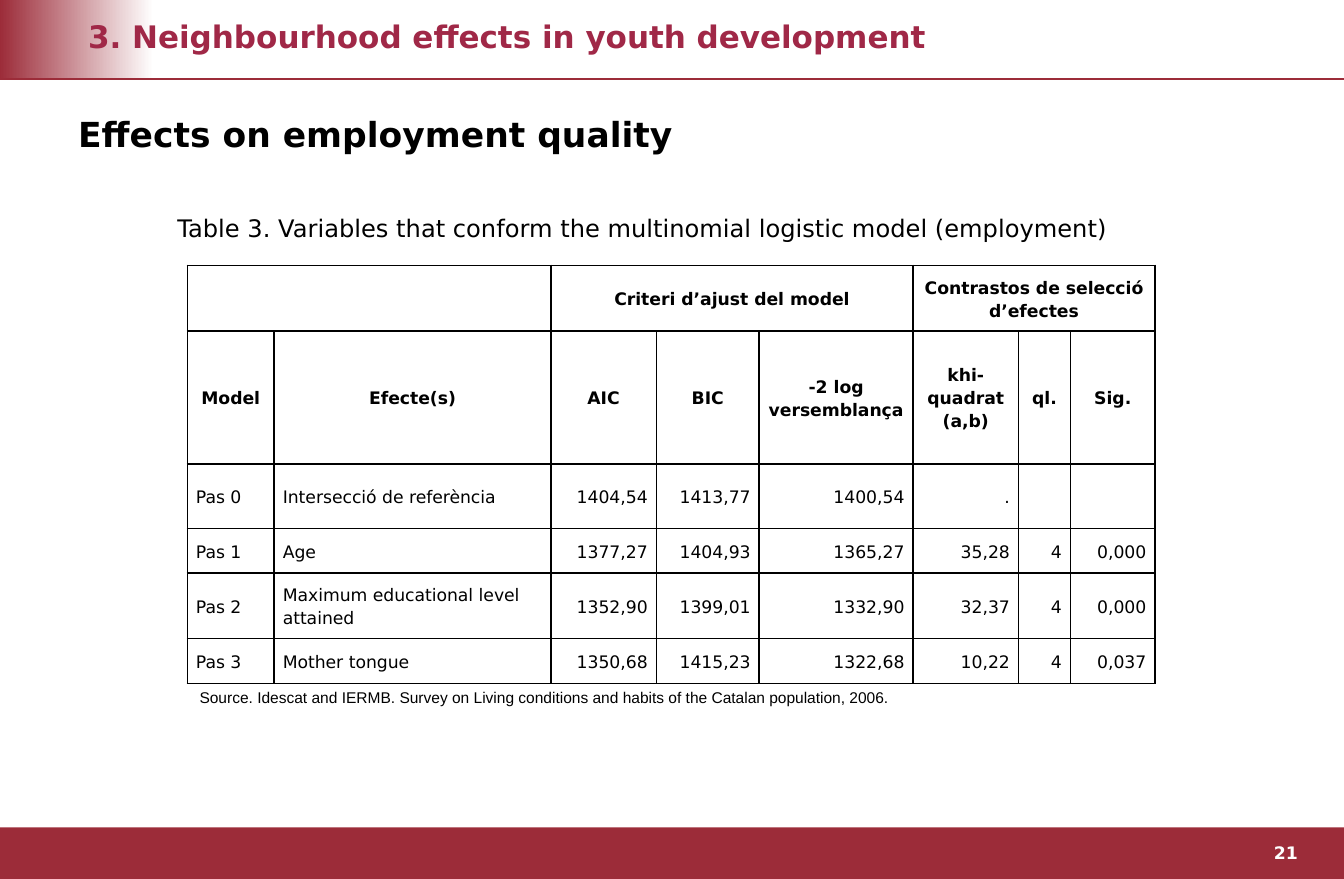
from lxml.etree import SubElement
from pptx import Presentation
from pptx.dml.color import RGBColor
from pptx.enum.shapes import MSO_CONNECTOR as Connector, MSO_SHAPE as Shape
from pptx.enum.text import MSO_ANCHOR as Anchor, MSO_AUTO_SIZE as AutoSize, PP_ALIGN as Align
from pptx.oxml.ns import qn
from pptx.util import Inches, Pt

SLIDE_WIDTH, SLIDE_HEIGHT = Pt(780), Pt(510.25)
MAROON, BLACK, WHITE = "9C2C39", "000000", "FFFFFF"
SANS = "DejaVu Sans"

TITLE = "3. Neighbourhood effects in youth development"
SUBTITLE = "Effects on employment quality"
CAPTION = "Table 3. Variables that conform the multinomial logistic model (employment)"
SOURCE = "Source. Idescat and IERMB. Survey on Living conditions and habits of the Catalan population, 2006."
PAGE_NUMBER = "21"

GROUPS = [(0, 1, ""), (2, 4, "Criteri d’ajust del model"), (5, 7, "Contrastos de selecció d’efectes")]
HEADINGS = ["Model", "Efecte(s)", "AIC", "BIC", "-2 log versemblança", "khi-quadrat (a,b)", "ql.", "Sig."]
STEPS = [
    ["Pas 0", "Intersecció de referència", "1404,54", "1413,77", "1400,54", ".", "", ""],
    ["Pas 1", "Age", "1377,27", "1404,93", "1365,27", "35,28", "4", "0,000"],
    ["Pas 2", "Maximum educational level attained", "1352,90", "1399,01", "1332,90", "32,37", "4", "0,000"],
    ["Pas 3", "Mother tongue", "1350,68", "1415,23", "1322,68", "10,22", "4", "0,037"],
]
COLUMN_WIDTHS = [0.7, 2.23, 0.85, 0.83, 1.24, 0.85, 0.42, 0.68]
ROW_HEIGHTS = [0.53, 1.07, 0.52, 0.36, 0.53, 0.36]


def color(value):
    return RGBColor.from_string(value)


def write(frame, text, size=10, font=SANS, ink=BLACK, bold=False, align=Align.LEFT, spacing=1.0):
    frame.word_wrap = True
    para = frame.paragraphs[0]
    para.alignment = align
    para.line_spacing = spacing
    para.space_before = Pt(0)
    span = para.add_run()
    span.text = text
    span.font.size = Pt(size)
    span.font.name = font
    span.font.bold = bold
    span.font.color.rgb = color(ink)


def place(box, left, top, width, height):
    box.left, box.top = Inches(left), Inches(top)
    box.width, box.height = Inches(width), Inches(height)


def add_text(page, area, text, **style):
    box = page.shapes.add_textbox(*map(Inches, area))
    write(box.text_frame, text, **style)


def fill_placeholder(box, area, text, **style):
    place(box, *area)
    frame = box.text_frame
    frame.auto_size = AutoSize.NONE
    frame.vertical_anchor = Anchor.TOP
    properties = frame.paragraphs[0]._p.get_or_add_pPr()
    properties.set("marL", "0")
    properties.set("indent", "0")
    SubElement(properties, qn("a:buNone"))
    write(frame, text, **style)


def add_bar(page, top, width, height):
    bar = page.shapes.add_shape(Shape.RECTANGLE, 0, Inches(top), width, Inches(height))
    bar.shadow.inherit = False
    bar.line.fill.background()
    return bar


def add_frame(page):
    corner = add_bar(page, 0, Inches(1.24), 0.64)
    corner.fill.gradient()
    corner.fill.gradient_angle = 0
    for stop, shade in zip(corner.fill.gradient_stops, (MAROON, WHITE)):
        stop.color.rgb = color(shade)
    page.shapes.title.element.addprevious(corner.element)

    footer = add_bar(page, 6.67, SLIDE_WIDTH, 0.42)
    footer.fill.solid()
    footer.fill.fore_color.rgb = color(MAROON)

    rule = page.shapes.add_connector(Connector.STRAIGHT, 0, Inches(0.64), SLIDE_WIDTH, Inches(0.64))
    rule.line.color.rgb = color(MAROON)
    rule.line.width = Pt(1)
    SubElement(rule.element.spPr, qn("a:effectLst"))


def add_borders(cell):
    properties = cell._tc.get_or_add_tcPr()
    for side in ("lnL", "lnR", "lnT", "lnB"):
        line = SubElement(properties, qn(f"a:{side}"), w=str(Pt(1)))
        solid = SubElement(line, qn("a:solidFill"))
        SubElement(solid, qn("a:srgbClr"), val=BLACK)


def fill_cell(cell, text, **style):
    cell.vertical_anchor = Anchor.MIDDLE
    cell.margin_left = cell.margin_right = Inches(0.07)
    cell.margin_top = cell.margin_bottom = 0
    if text:
        write(cell.text_frame, text, spacing=1.15, **style)


def add_model_table(page):
    holder = page.shapes.add_table(
        len(ROW_HEIGHTS), len(COLUMN_WIDTHS), Inches(1.51), Inches(2.14),
        Inches(sum(COLUMN_WIDTHS)), Inches(sum(ROW_HEIGHTS)))
    table = holder.table
    table.first_row = table.horz_banding = False
    for column, width in zip(table.columns, COLUMN_WIDTHS):
        column.width = Inches(width)
    for row, height in zip(table.rows, ROW_HEIGHTS):
        row.height = Inches(height)
    for cell in table.iter_cells():
        add_borders(cell)
        cell.fill.background()

    for first, last, text in GROUPS:
        table.cell(0, first).merge(table.cell(0, last))
        fill_cell(table.cell(0, first), text, bold=True, align=Align.CENTER)
    for column, text in enumerate(HEADINGS):
        fill_cell(table.cell(1, column), text, bold=True, align=Align.CENTER)
    for row, step in enumerate(STEPS, start=2):
        for column, text in enumerate(step):
            fill_cell(table.cell(row, column), text, align=Align.LEFT if column < 2 else Align.RIGHT)


def main():
    deck = Presentation()
    deck.slide_width, deck.slide_height = SLIDE_WIDTH, SLIDE_HEIGHT
    page = deck.slides.add_slide(deck.slide_layouts[1])
    add_frame(page)
    fill_placeholder(page.shapes.title, (0.61, 0.09, 8.87, 0.66), TITLE, size=18, ink="A02847", bold=True)
    fill_placeholder(page.placeholders[1], (0.53, 0.86, 9.06, 0.55), SUBTITLE, size=20, bold=True)
    add_text(page, (1.12, 1.67, 8.12, 0.34), CAPTION, size=14, align=Align.CENTER)
    add_model_table(page)
    add_text(page, (1.51, 5.5, 7.42, 0.4), SOURCE, size=9, font="Arial", align=Align.JUSTIFY)
    add_text(page, (9.9, 6.74, 0.93, 0.27), PAGE_NUMBER, ink=WHITE, bold=True, align=Align.CENTER)
    deck.save("out.pptx")


if __name__ == "__main__":
    main()
